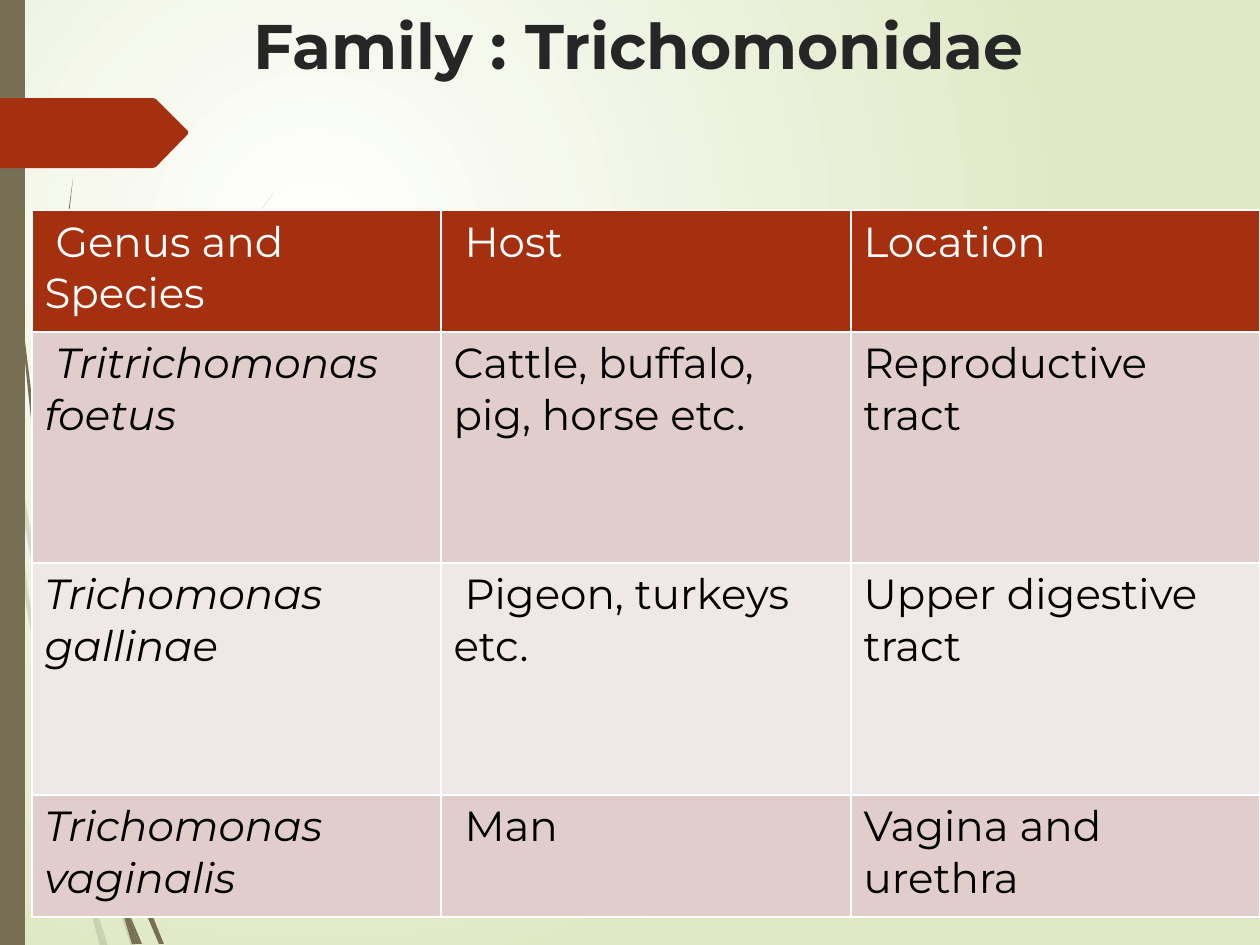
import lxml.etree
import pptx
import pptx.dml.color
import pptx.enum.shapes
import pptx.enum.text
import pptx.oxml.ns
import pptx.util

SCALE = 914400 / 126
COLORS = {
    "white": "FFFFFF", "pale_green": "DFE8C4", "olive": "766F54", "rust": "A53010",
    "title": "262626", "body": "000000", "band_dark": "E1CDCC", "band_light": "F0E8E7",
}
FAINT_WISPS = [
    [(10, 441), (8, 406), (0, 355), (0, 377), (9, 433)],
    [(50, 658), (74, 755), (74, 738), (54, 655), (13, 435), (15, 474)],
    [(81, 765), (77, 751), (77, 769), (107, 874), (131, 946), (136, 946), (111, 872)],
    [(105, 946), (108, 946), (92, 896)],
    [(81, 861), (60, 780), (28, 591), (15, 474), (10, 441), (24, 592), (57, 782),
     (81, 873), (88, 900), (87, 891)],
    [(73, 755), (76, 814), (81, 861), (84, 872), (92, 896), (91, 890), (79, 814),
     (77, 769), (77, 766)],
    [(77, 736), (96, 582), (140, 440), (200, 309), (236, 249), (253, 221), (273, 194),
     (273, 193), (253, 220), (234, 248), (199, 307), (139, 438), (94, 581), (74, 736),
     (74, 738), (77, 751)],
    [(88, 900), (100, 946), (103, 946)],
    [(77, 766), (77, 769), (77, 751), (74, 738), (73, 755)],
    [(84, 872), (82, 861), (87, 891), (88, 900), (103, 946), (105, 946), (92, 896)],
]
SOLID_WISPS = [
    [(6, 139), (18, 294), (34, 447), (58, 601), (59, 606), (57, 576), (57, 571),
     (38, 447), (19, 292), (8, 137), (5, 60), (4, 0), (3, 0), (4, 60)],
    [(92, 746), (111, 813), (111, 798), (111, 795), (97, 743), (63, 595), (67, 636)],
    [(118, 818), (115, 808), (115, 827), (137, 892), (159, 944), (164, 944), (142, 890)],
    [(115, 871), (102, 828), (76, 701), (67, 636), (59, 601), (71, 702), (97, 830),
     (116, 892), (122, 910), (121, 903)],
    [(63, 595), (60, 571), (55, 440), (60, 309), (66, 243), (73, 178), (64, 243),
     (59, 309), (54, 440), (57, 566), (62, 595)],
    [(139, 944), (142, 944), (126, 906)],
    [(59, 601), (67, 636), (63, 595), (62, 595), (57, 566), (57, 571)],
    [(115, 798), (130, 696), (165, 600), (213, 512), (241, 471), (256, 452), (272, 433),
     (271, 433), (256, 451), (241, 470), (212, 510), (163, 597), (127, 694), (111, 795),
     (115, 808)],
    [(122, 910), (132, 944), (136, 944)],
    [(111, 813), (115, 871), (121, 890), (126, 906), (126, 902), (115, 827), (113, 820)],
    [(111, 813), (113, 820), (115, 827), (115, 808), (111, 795), (111, 798)],
    [(121, 890), (115, 871), (121, 903), (122, 910), (136, 944), (139, 944), (126, 906)],
]
ARROW = [(188, 36), (156, 69), (153, 70), (0, 70), (0, 0), (153, 0), (156, 1), (188, 33)]
ROWS = [
    [" Genus and Species", " Host", "Location"],
    [" Tritrichomonas foetus", "Cattle, buffalo, pig, horse etc.", "Reproductive tract"],
    ["Trichomonas gallinae", " Pigeon, turkeys etc.", "Upper digestive tract"],
    ["Trichomonas vaginalis", " Man", "Vagina and urethra"],
]
COLUMN_WIDTHS = [409, 410, 409]
ROW_HEIGHTS = [122, 231, 232, 122]


def px(length):
    return pptx.util.Emu(round(length * SCALE))


def rgb(name):
    return pptx.dml.color.RGBColor.from_string(COLORS[name])


def child(parent, tag, **attributes):
    return lxml.etree.SubElement(parent, pptx.oxml.ns.qn(tag), attributes)


def add_span(para, text, color, **values):
    span = para.add_run()
    span.text = text
    for name, value in values.items():
        setattr(span.font, name, value)
    span.font.color.rgb = rgb(color)


def paint(shape, color, alpha=None):
    shape.shadow.inherit = False
    shape.fill.solid()
    shape.fill.fore_color.rgb = rgb(color)
    shape.line.fill.background()
    if alpha:
        tint = shape.element.spPr.find(".//" + pptx.oxml.ns.qn("a:srgbClr"))
        child(tint, "a:alpha", val=str(alpha * 1000))


def add_outline(page, box, points, color, alpha=None):
    builder = page.shapes.build_freeform(*points[0], scale=SCALE)
    builder.add_line_segments(points[1:], close=True)
    paint(builder.convert_to_shape(px(box[0]), px(box[1])), color, alpha)


def add_background(page):
    fill = page.background.fill
    fill.gradient()
    for stop, position, color in zip(fill.gradient_stops, (0, 1), ("white", "pale_green")):
        stop.position = position
        stop.color.rgb = rgb(color)
    gradient = page.element.find(".//" + pptx.oxml.ns.qn("a:gradFill"))
    gradient.remove(gradient.find(pptx.oxml.ns.qn("a:lin")))
    circle = child(gradient, "a:path", path="circle")
    child(circle, "a:fillToRect", l="50000", t="50000", r="100000", b="100000")


def add_side_decoration(page, box):
    left, top, width, height = box
    for wisps, alpha in ((FAINT_WISPS, 20), (SOLID_WISPS, None)):
        for points in wisps:
            add_outline(page, box, points, "olive", alpha)
    bar = page.shapes.add_shape(
        pptx.enum.shapes.MSO_SHAPE.RECTANGLE, px(left), px(top), px(width), px(height))
    paint(bar, "olive")
    add_outline(page, (left, top + 98), ARROW, "rust")


def add_title(page, box):
    frame = page.shapes.add_textbox(*map(px, box)).text_frame
    frame.word_wrap = True
    frame.vertical_anchor = pptx.enum.text.MSO_ANCHOR.TOP
    para = frame.paragraphs[0]
    para.alignment = pptx.enum.text.PP_ALIGN.CENTER
    size = pptx.util.Pt(36)
    add_span(para, " ", "title", name="Quicksand", size=size)
    add_span(para, "Family : Trichomonidae", "title", name="Montserrat", size=size, bold=True)


def add_borders(cell):
    properties = cell._tc.get_or_add_tcPr()
    for side in "LRTB":
        line = child(properties, "a:ln" + side, w=str(pptx.util.Pt(1)))
        child(child(line, "a:solidFill"), "a:srgbClr", val=COLORS["white"])


def add_species_table(page, box):
    table = page.shapes.add_table(len(ROWS), len(COLUMN_WIDTHS), *map(px, box)).table
    for column, width in zip(table.columns, COLUMN_WIDTHS):
        column.width = px(width)
    for row, height in zip(table.rows, ROW_HEIGHTS):
        row.height = px(height)
    for r, texts in enumerate(ROWS):
        fill = "rust" if r == 0 else ("band_dark" if r % 2 else "band_light")
        for c, text in enumerate(texts):
            cell = table.cell(r, c)
            add_borders(cell)
            cell.fill.solid()
            cell.fill.fore_color.rgb = rgb(fill)
            add_span(cell.text_frame.paragraphs[0], text, "body" if r else "white",
                     name="Montserrat", size=pptx.util.Pt(24), bold=False,
                     italic=r > 0 and c == 0)


def main():
    deck = pptx.Presentation()
    deck.slide_width, deck.slide_height = px(1260), px(945)
    page = deck.slides.add_slide(deck.slide_layouts[6])
    add_background(page)
    add_side_decoration(page, (0, 0, 25, 945))
    add_title(page, (0, 0, 1260, 189))
    add_species_table(page, (32, 210, sum(COLUMN_WIDTHS), sum(ROW_HEIGHTS)))
    deck.save("out.pptx")


if __name__ == "__main__":
    main()
